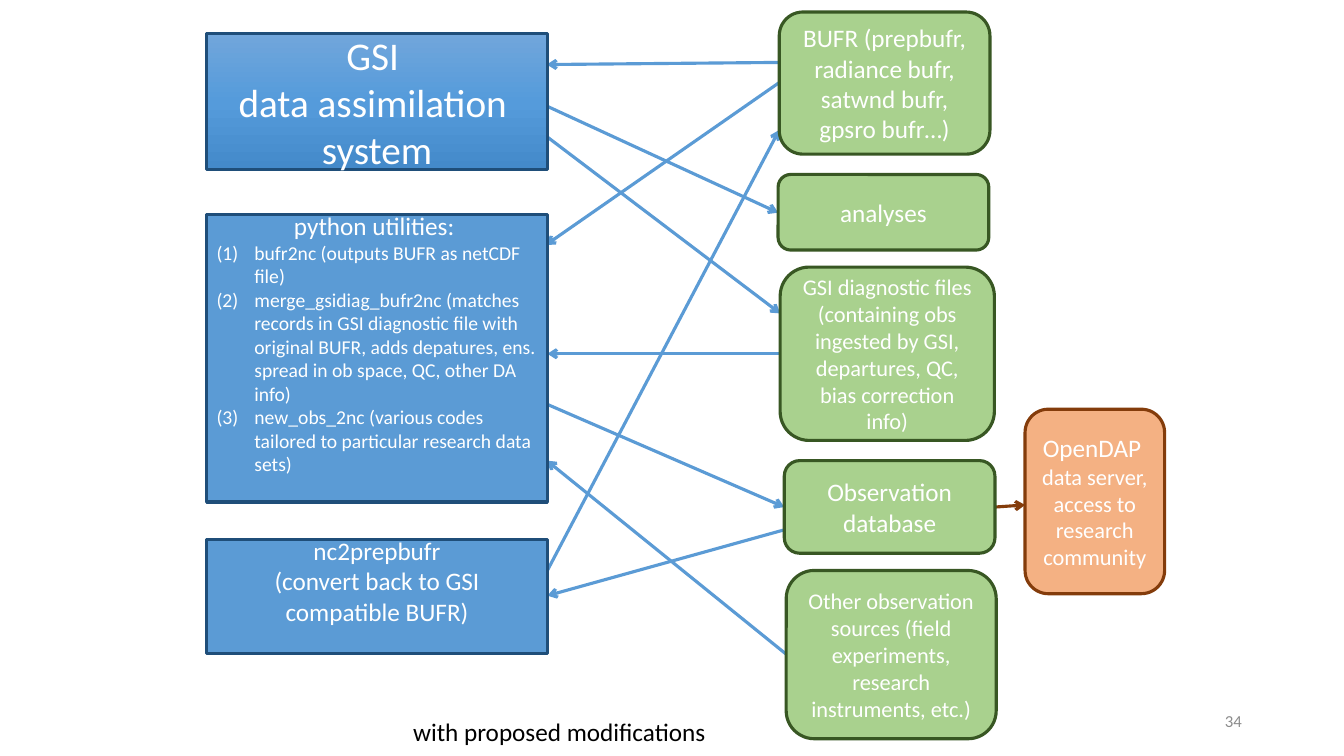
from copy import deepcopy
from dataclasses import dataclass

from lxml import etree
from pptx import Presentation
from pptx.dml.color import RGBColor
from pptx.enum import shapes, text
from pptx.oxml import ns
from pptx.util import Pt

COLORS = {
    "blue": "5B9BD5", "navy": "1F4E79",
    "green": "A9D18E", "forest": "385723",
    "orange": "F4B183", "brown": "843C0B",
    "white": "FFFFFF", "black": "000000", "gray": "8C8C8C",
}
GRADIENT = [(0, "71A6DB"), (0.5, "559BDB"), (1, "448ACA")]
OUTLINES = {"blue": "navy", "green": "forest", "orange": "brown"}
FONT = "Calibri"
LINE_WIDTH = 2.25
LEFT_X, LEFT_W = 147.6, 243.4
INSET = 3.6
LOW_INSET = 25.6  # lifts the text by half an 18 pt line

RECT = shapes.MSO_SHAPE.RECTANGLE
ROUND = shapes.MSO_SHAPE.ROUNDED_RECTANGLE
LEFT, CENTER, RIGHT = text.PP_ALIGN.LEFT, text.PP_ALIGN.CENTER, text.PP_ALIGN.RIGHT


@dataclass
class Para:
    text: str
    size: float = 18
    numbered: bool = False
    align: text.PP_ALIGN = CENTER
    color: str = "white"


@dataclass
class Box:
    x: float
    y: float
    w: float
    h: float
    paras: list[Para]
    fill: str = "green"
    kind: shapes.MSO_SHAPE = ROUND
    gradient: bool = False
    bottom: float = INSET


@dataclass
class Arrow:
    x1: float
    y1: float
    x2: float
    y2: float
    color: str = "blue"


@dataclass
class Label:
    x: float
    y: float
    w: float
    h: float
    para: Para
    wrap: bool = True
    anchor: text.MSO_ANCHOR = text.MSO_ANCHOR.TOP


BOXES = [
    # Programs
    Box(LEFT_X, 23.8, LEFT_W, 97.2,
        [Para("GSI ", 28), Para("data assimilation ", 28), Para("system", 28)],
        "blue", RECT, gradient=True),
    Box(LEFT_X, 153.4, LEFT_W, 205.2, [
        Para("python utilities: "),
        Para("bufr2nc (outputs BUFR as netCDF file)", 14, True, LEFT),
        Para("merge_gsidiag_bufr2nc (matches records in GSI diagnostic file with "
             "original BUFR, adds depatures, ens. spread in ob space, QC, "
             "other DA info)", 14, True, LEFT),
        Para("new_obs_2nc (various codes tailored to particular research data sets)",
             14, True, LEFT),
    ], "blue", RECT, bottom=LOW_INSET),
    Box(LEFT_X, 385.2, LEFT_W, 81.4,
        [Para("nc2prepbufr"), Para("(convert back to GSI compatible BUFR)")],
        "blue", RECT, bottom=LOW_INSET),
    # Data
    Box(556.6, 8.6, 150.5, 101.5,
        [Para("BUFR (prepbufr, radiance bufr, satwnd bufr, gpsro bufr…)")]),
    Box(555.8, 124.6, 150.5, 54, [Para("analyses")]),
    Box(557.3, 190.8, 153, 123.8,
        [Para("GSI diagnostic files (containing obs ingested by GSI, departures, "
              "QC, bias correction info)", 16)]),
    Box(560.2, 329, 150.5, 66.2, [Para("Observation"), Para("database")]),
    Box(561.6, 407.5, 150, 120.2,
        [Para("Other observation sources (field experiments, research "
              "instruments, etc.)", 16)]),
    # Public access
    Box(732.2, 292.3, 99.7, 131.8,
        [Para("OpenDAP "), Para("data server, access to research community", 16)],
        "orange"),
]

ARROWS = [
    Arrow(391, 97.9, 557.3, 223.9),
    Arrow(559.4, 378.7, 391, 425.5),
    Arrow(556.6, 44.6, 390.6, 46.1),
    Arrow(390.6, 288.7, 560.2, 362.2),
    Arrow(391, 407.5, 556.6, 92.9),
    Arrow(561.6, 467.3, 390.6, 329),
    Arrow(557.3, 252.7, 391, 252.7),
    Arrow(556.6, 59, 389.9, 175),
    Arrow(391.7, 76.3, 555.8, 151.9),
    Arrow(710.6, 362.2, 732.2, 360.7, "brown"),
]

LABELS = [
    Label(288, 508.3, 226.1, 28.8,
          Para("with proposed modifications", align=LEFT, color="black"), wrap=False),
    Label(678.2, 500.4, 216, 28.8, Para("34", 12, align=RIGHT, color="gray"),
          anchor=text.MSO_ANCHOR.MIDDLE),
]


def rgb(name: str) -> RGBColor:
    return RGBColor.from_string(COLORS[name])


def write(tf, paras: list[Para]) -> None:
    for i, para in enumerate(paras):
        p = tf.paragraphs[0] if i == 0 else tf.add_paragraph()
        p.text = para.text
        p.alignment = para.align
        p.font.name, p.font.size = FONT, Pt(para.size)
        p.font.color.rgb = rgb(para.color)
        if para.numbered:
            pPr = p._p.get_or_add_pPr()
            pPr.set("marL", str(Pt(27)))
            pPr.set("indent", str(-Pt(27)))
            number = etree.Element(ns.qn("a:buAutoNum"), type="arabicParenBoth")
            pPr.insert(0, number)


def shade(sp) -> None:
    sp.fill.gradient()
    sp.fill.gradient_angle = 270
    stop_list = sp._element.spPr.find(".//" + ns.qn("a:gsLst"))
    stop_list.append(deepcopy(stop_list[0]))
    for stop, (position, color) in zip(sp.fill.gradient_stops, GRADIENT):
        stop.position = position
        stop.color.rgb = RGBColor.from_string(color)


def draw_box(s, box: Box) -> None:
    sp = s.shapes.add_shape(box.kind, Pt(box.x), Pt(box.y), Pt(box.w), Pt(box.h))
    sp.shadow.inherit = False
    if box.gradient:
        shade(sp)
    else:
        sp.fill.solid()
        sp.fill.fore_color.rgb = rgb(box.fill)
    sp.line.color.rgb = rgb(OUTLINES[box.fill])
    sp.line.width = Pt(LINE_WIDTH)
    tf = sp.text_frame
    tf.word_wrap = True
    tf.vertical_anchor = text.MSO_ANCHOR.MIDDLE
    tf.margin_bottom = Pt(box.bottom)
    write(tf, box.paras)


def draw_arrow(s, arrow: Arrow) -> None:
    line = s.shapes.add_connector(shapes.MSO_CONNECTOR.STRAIGHT, Pt(arrow.x1),
                                  Pt(arrow.y1), Pt(arrow.x2), Pt(arrow.y2))
    line.line.color.rgb = rgb(arrow.color)
    line.line.width = Pt(LINE_WIDTH)
    etree.SubElement(line.line._get_or_add_ln(), ns.qn("a:tailEnd"), type="arrow")
    etree.SubElement(line._element.spPr, ns.qn("a:effectLst"))


def draw_label(s, label: Label) -> None:
    sp = s.shapes.add_textbox(Pt(label.x), Pt(label.y), Pt(label.w), Pt(label.h))
    tf = sp.text_frame
    tf.word_wrap = label.wrap
    tf.vertical_anchor = label.anchor
    write(tf, [label.para])


def main() -> None:
    prs = Presentation()
    prs.slide_width, prs.slide_height = Pt(960), Pt(540)
    s = prs.slides.add_slide(prs.slide_layouts[6])
    # Arrows lie behind the boxes
    for arrow in ARROWS:
        draw_arrow(s, arrow)
    for box in BOXES:
        draw_box(s, box)
    for label in LABELS:
        draw_label(s, label)
    prs.save("out.pptx")


if __name__ == "__main__":
    main()
